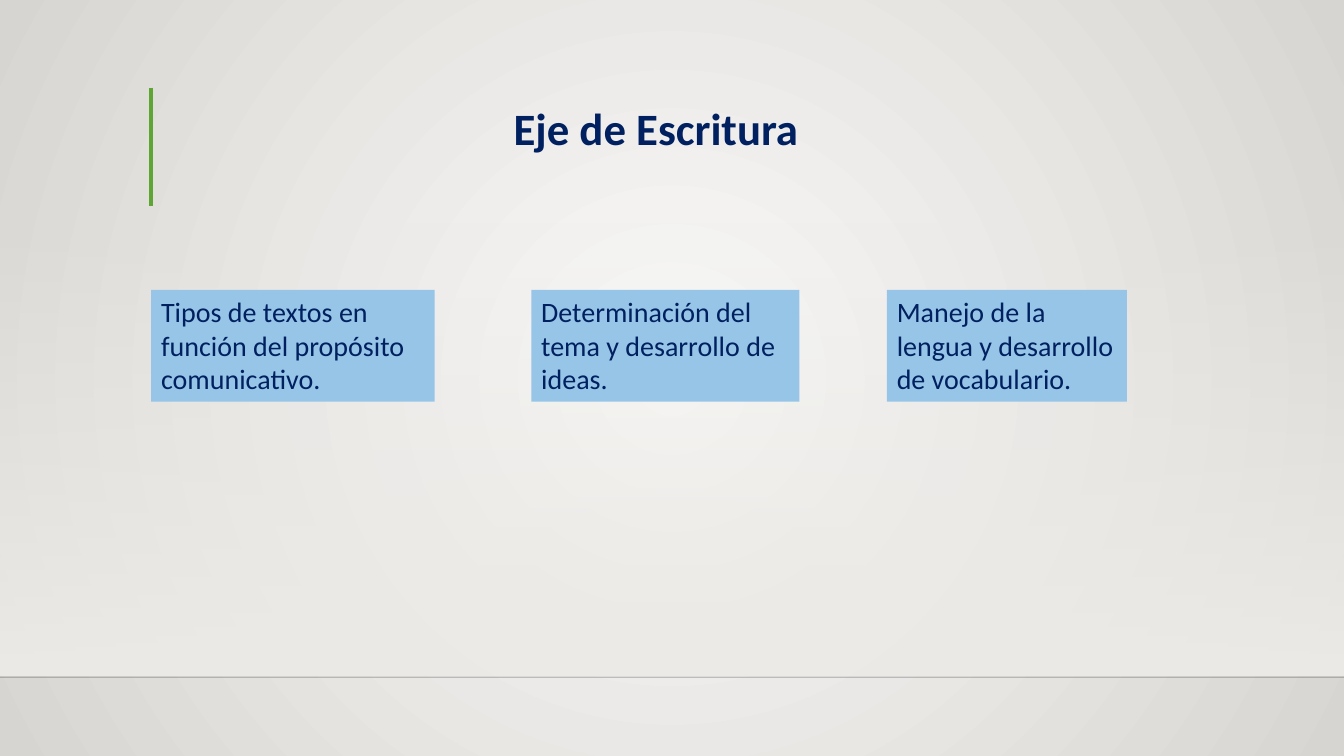
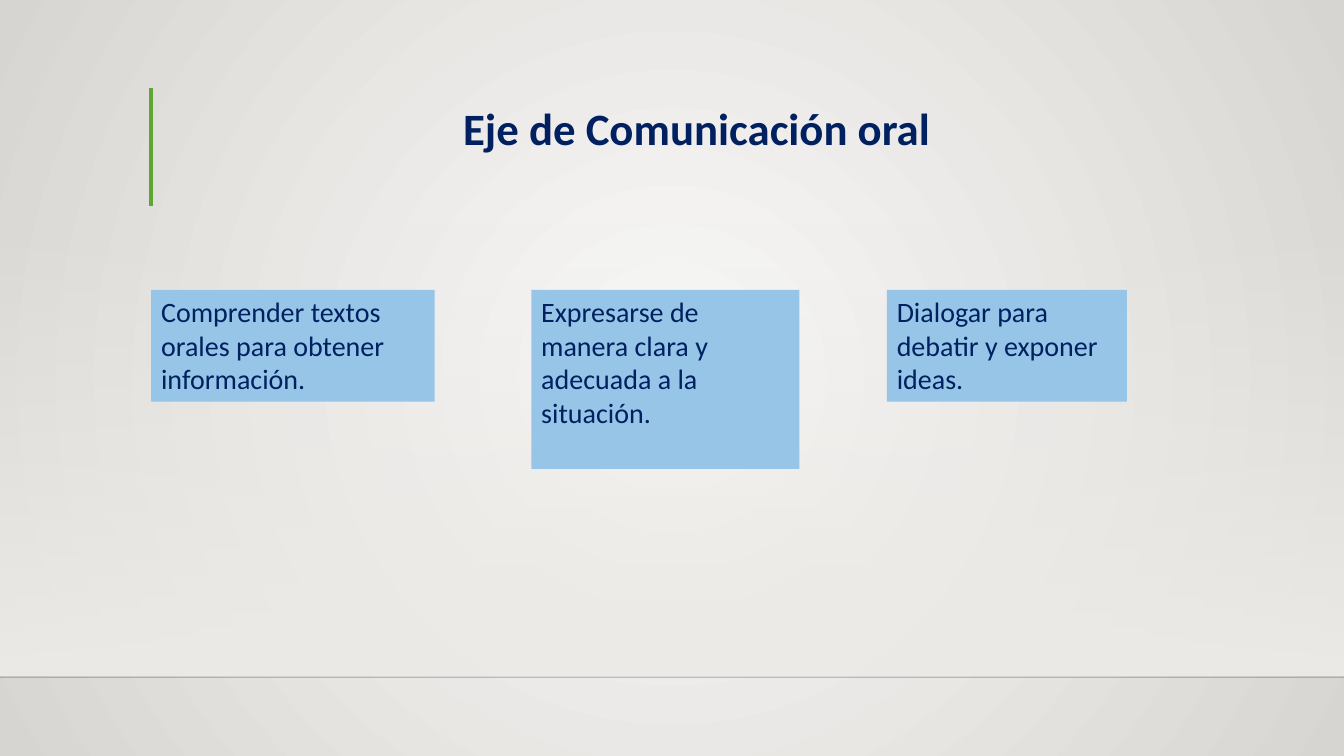
from lxml import etree
from pptx import Presentation
from pptx.dml.color import RGBColor
from pptx.enum.shapes import MSO_CONNECTOR, MSO_SHAPE
from pptx.enum.text import MSO_ANCHOR, PP_ALIGN
from pptx.oxml.ns import qn
from pptx.util import Pt

RECT = MSO_SHAPE.RECTANGLE
STRAIGHT = MSO_CONNECTOR.STRAIGHT
TOP, BOTTOM = MSO_ANCHOR.TOP, MSO_ANCHOR.BOTTOM
LEFT = PP_ALIGN.LEFT

FONT = "Calibri"
COLORS = {
    "center": "FAFAF9", "edge": "D7D5D2", "floor": "EDEBE7",
    "rule": "000001", "accent": "5FA534", "card": "96C5E7", "text": "002060",
}
WIDTH, HEIGHT = 960, 540
CARD_TOP = 207
CARD_COLUMNS = [(108, 202.5), (379.5, 191.5), (633.5, 171.5)]  # left, width

# title, title indent, cards as (text, height)
SLIDES = [
    ("Eje de Escritura", 253, [
        ("Tipos de textos en función del propósito comunicativo.", 80),
        ("Determinación del tema y desarrollo de ideas.", 80),
        ("Manejo de la lengua y desarrollo de vocabulario.", 80),
    ]),
    ("Eje de Comunicación oral", 217, [
        ("Comprender textos orales para obtener información.", 80),
        ("Expresarse de manera clara y adecuada a la situación.", 128),
        ("Dialogar para debatir y exponer ideas.", 80),
    ]),
]


def rgb(name):
    return RGBColor.from_string(COLORS[name])


def set_gradient(fill, first, last):
    fill.gradient()
    for stop, name in zip(fill.gradient_stops, (first, last)):
        stop.color.rgb = rgb(name)


def set_alpha(element, percent):
    """Set the opacity of the first colour inside element."""
    color = element.find(".//" + qn("a:srgbClr"))
    etree.SubElement(color, qn("a:alpha"), val=str(percent * 1000))


def set_background(master):
    set_gradient(master.background.fill, "center", "edge")
    grad = master.element.find(".//" + qn("p:bgPr") + "/" + qn("a:gradFill"))
    grad.remove(grad.find(qn("a:lin")))
    circle = etree.SubElement(grad, qn("a:path"), path="circle")
    etree.SubElement(circle, qn("a:fillToRect"),
                     l="50000", t="50000", r="50000", b="50000")


def add_rect(s, left, top, width, height):
    sp = s.shapes.add_shape(RECT, Pt(left), Pt(top), Pt(width), Pt(height))
    sp.shadow.inherit = False
    sp.line.fill.background()
    return sp


def add_line(s, x1, y1, x2, y2, color, weight):
    line = s.shapes.add_connector(STRAIGHT, Pt(x1), Pt(y1), Pt(x2), Pt(y2))
    line.line.color.rgb = rgb(color)
    line.line.width = Pt(weight)
    etree.SubElement(line.element.spPr, qn("a:effectLst"))
    return line


def write(sp, text, size, anchor, bold=False):
    tf = sp.text_frame
    tf.word_wrap = True
    tf.vertical_anchor = anchor
    p = tf.paragraphs[0]
    p.alignment = LEFT
    r = p.add_run()
    r.text = text
    r.font.name = FONT
    r.font.size = Pt(size)
    r.font.bold = bold
    r.font.color.rgb = rgb("text")
    return tf


def add_frame(s):
    floor = add_rect(s, 0, 158.5, WIDTH, 324)
    set_gradient(floor.fill, "floor", "floor")
    floor.fill.gradient_angle = 270
    set_alpha(floor.element.spPr, 0)
    rule = add_line(s, 0, 483.8, WIDTH, 483.8, "rule", 1)
    set_alpha(rule.element.spPr, 20)
    add_line(s, 108, 62.6, 108, 146.9, "accent", 3)


def add_title(s, text, indent):
    box = s.shapes.add_textbox(Pt(113.8), Pt(31.7), Pt(749.5), Pt(82.8))
    tf = write(box, text, 32, BOTTOM, bold=True)
    tf.margin_left = Pt(indent)
    tf.paragraphs[0].line_spacing = 0.9


def add_card(s, left, width, text, height):
    card = add_rect(s, left, CARD_TOP, width, height)
    card.fill.solid()
    card.fill.fore_color.rgb = rgb("card")
    write(card, text, 20, TOP)


def main():
    prs = Presentation()
    prs.slide_width, prs.slide_height = Pt(WIDTH), Pt(HEIGHT)
    set_background(prs.slide_master)
    for title, indent, cards in SLIDES:
        s = prs.slides.add_slide(prs.slide_layouts[6])
        add_frame(s)
        add_title(s, title, indent)
        for (left, width), (text, height) in zip(CARD_COLUMNS, cards):
            add_card(s, left, width, text, height)
    prs.save("out.pptx")


if __name__ == "__main__":
    main()
